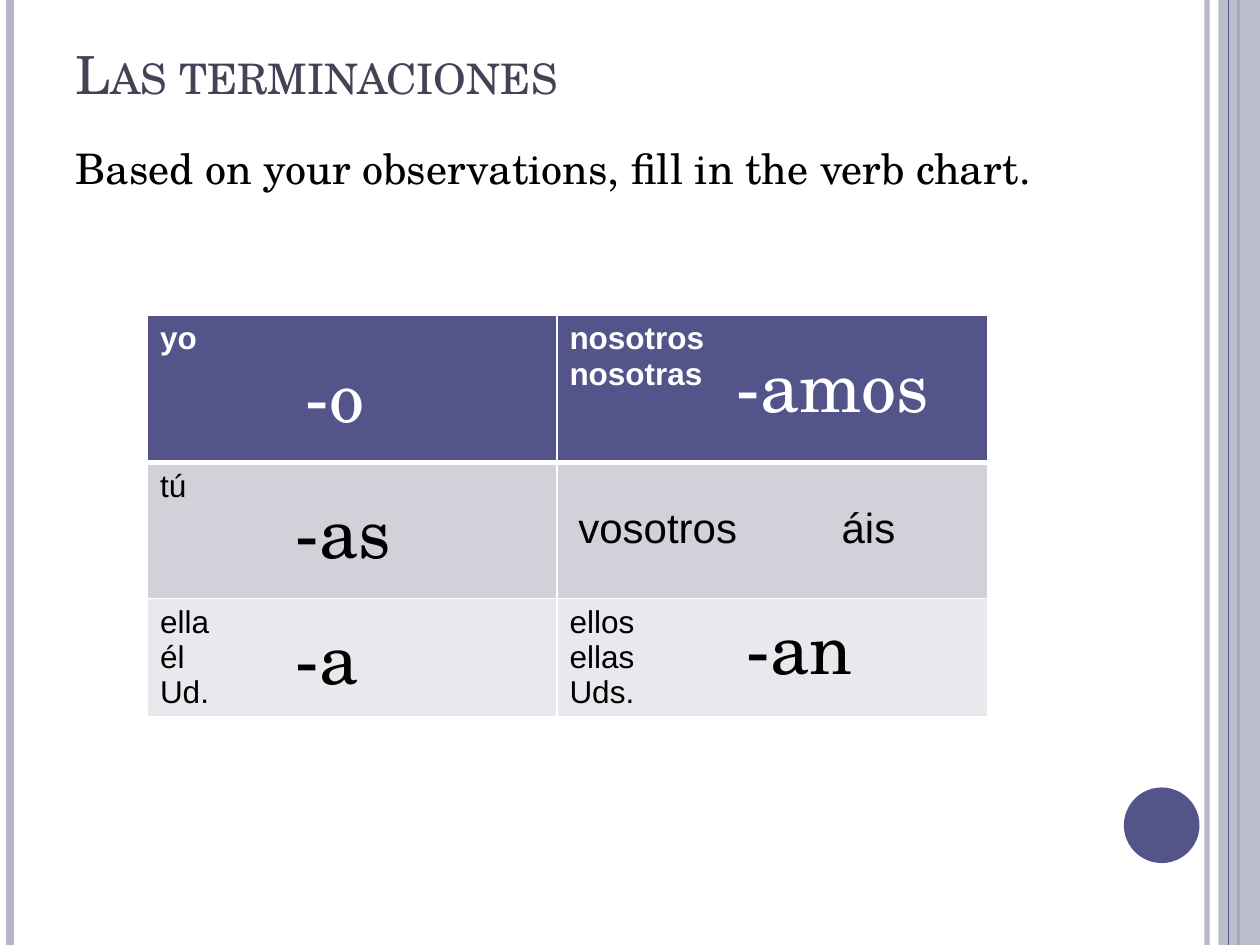
from lxml.etree import SubElement
from pptx import Presentation
from pptx.dml.color import RGBColor
from pptx.enum.shapes import MSO_CONNECTOR, MSO_SHAPE
from pptx.enum.text import MSO_ANCHOR, MSO_AUTO_SIZE, PP_ALIGN
from pptx.oxml.ns import qn
from pptx.util import Inches, Pt

COLORS = {
    "indigo": "53548A", "lavender": "B3B4C4", "slate": "424456",
    "band_dark": "D1D1DA", "band_light": "E9E9ED",
    "white": "FFFFFF", "black": "000000",
}
SERIF, SANS = "TeX Gyre Schola", "Arial"

TITLE = "Las terminaciones"
INSTRUCTION = "Based on your observations, fill in the verb chart."
PRONOUNS = [
    ["yo", "nosotros\nnosotras"],
    ["tú", "vosotros\táis"],
    ["ella\nél\nUd.", "ellos\nellas\nUds."],
]
ROW_STYLES = [
    ("indigo", "white", True),
    ("band_dark", "black", False),
    ("band_light", "black", False),
]
COLUMN_WIDTHS = [3.25, 3.42]
ROW_HEIGHTS = [1.17, 1.08, 0.75]
ENDINGS = [
    ("-o", 2.33, 2.75, 0.92, "white"),
    ("-as", 2.25, 3.83, 1, "black"),
    ("-a", 2.25, 4.83, 1.25, "black"),
    ("-amos", 5.75, 2.67, 2, "white"),
    ("-an", 5.83, 4.75, 1.42, "black"),
]
LEFT_RULES = [
    (9.58, "lavender", 3, 93),
    (0.08, "lavender", 4.5, 100),
    (9.83, "indigo", 1.5, 100),
]
INNER_RULE = (9.75, "indigo", 0.75, 100)


def rgb(color):
    return RGBColor.from_string(COLORS[color])


def set_alpha(fill_parent, percent):
    if percent < 100:
        color = fill_parent.find(qn("a:solidFill")).find(qn("a:srgbClr"))
        SubElement(color, qn("a:alpha"), val=str(percent * 1000))


def style_text(frame, size, face, color, bold=False):
    for paragraph in frame.paragraphs:
        for run in paragraph.runs:
            run.font.size = Pt(size)
            run.font.name = face
            run.font.bold = bold
            run.font.color.rgb = rgb(color)


def place(shape, left, top, width, height):
    shape.left, shape.top = Inches(left), Inches(top)
    shape.width, shape.height = Inches(width), Inches(height)


def add_rule(slide, x, color, weight, opacity):
    rule = slide.shapes.add_connector(
        MSO_CONNECTOR.STRAIGHT, Inches(x), 0, Inches(x), Inches(7.5))
    rule.line.color.rgb = rgb(color)
    rule.line.width = Pt(weight)
    properties = rule.line._ln.getparent()
    set_alpha(rule.line._ln, opacity)
    SubElement(properties, qn("a:effectLst"))


def add_ornament(slide, kind, box, color, opacity=100):
    ornament = slide.shapes.add_shape(kind, *map(Inches, box))
    ornament.shadow.inherit = False
    ornament.fill.solid()
    ornament.fill.fore_color.rgb = rgb(color)
    ornament.line.fill.background()
    set_alpha(ornament._element.spPr, opacity)


def add_decoration(slide):
    for rule in LEFT_RULES:
        add_rule(slide, *rule)
    add_ornament(slide, MSO_SHAPE.RECTANGLE, (9.67, 0, 0.33, 7.5), "lavender", 87)
    add_rule(slide, *INNER_RULE)
    add_ornament(slide, MSO_SHAPE.OVAL, (8.92, 6.25, 0.6, 0.6), "indigo")


def fill_placeholders(slide):
    title, instruction = slide.placeholders
    place(title, 0.5, 0.25, 8.17, 0.63)
    title.text_frame.text = TITLE
    title.text_frame.vertical_anchor = MSO_ANCHOR.BOTTOM
    heading = title.text_frame.paragraphs[0]
    heading.alignment = PP_ALIGN.LEFT
    style_text(title.text_frame, 30, SERIF, "slate")
    heading.runs[0].font._element.set("cap", "small")

    place(instruction, 0.5, 1.08, 8.17, 6)
    instruction.text_frame.text = INSTRUCTION
    sentence = instruction.text_frame.paragraphs[0]
    sentence.space_before = Pt(0)
    layout = sentence._p.get_or_add_pPr()
    layout.set("marL", str(Inches(0.5)))
    layout.set("indent", str(-Inches(0.5)))
    SubElement(layout, qn("a:buNone"))
    style_text(instruction.text_frame, 24, SERIF, "black")


def set_borders(cell, bottom_weight):
    properties = cell._tc.get_or_add_tcPr()
    for side in ("lnL", "lnR", "lnT", "lnB"):
        weight = bottom_weight if side == "lnB" else 1
        border = SubElement(properties, qn(f"a:{side}"), w=str(Pt(weight)))
        fill = SubElement(border, qn("a:solidFill"))
        SubElement(fill, qn("a:srgbClr"), val=COLORS["white"])


def add_verb_chart(slide):
    chart = slide.shapes.add_table(
        len(PRONOUNS), len(COLUMN_WIDTHS), Inches(1.17), Inches(2.5),
        Inches(sum(COLUMN_WIDTHS)), Inches(sum(ROW_HEIGHTS))).table
    for column, width in zip(chart.columns, COLUMN_WIDTHS):
        column.width = Inches(width)
    for r, (pronouns, (fill, color, bold)) in enumerate(zip(PRONOUNS, ROW_STYLES)):
        chart.rows[r].height = Inches(ROW_HEIGHTS[r])
        for c, pronoun in enumerate(pronouns):
            cell = chart.cell(r, c)
            set_borders(cell, 3 if r == 0 else 1)
            if r == 1:
                cell._tc.tcPr.find(qn("a:lnT")).set("w", str(Pt(3)))
            cell.fill.solid()
            cell.fill.fore_color.rgb = rgb(fill)
            cell.text_frame.text = pronoun
            style_text(cell.text_frame, 18, SANS, color, bold)

    vosotros = chart.cell(1, 1)
    vosotros.margin_left, vosotros.margin_top = Inches(0.17), Inches(0.34)
    layout = vosotros.text_frame.paragraphs[0]._p.get_or_add_pPr()
    tabs = SubElement(layout, qn("a:tabLst"))
    SubElement(tabs, qn("a:tab"), pos=str(Inches(2.09)), algn="l")
    style_text(vosotros.text_frame, 24, SANS, "black")


def add_endings(slide):
    for ending, left, top, width, color in ENDINGS:
        box = slide.shapes.add_textbox(*map(Inches, (left, top, width, 0.77)))
        box.text_frame.word_wrap = True
        box.text_frame.auto_size = MSO_AUTO_SIZE.SHAPE_TO_FIT_TEXT
        box.text_frame.text = ending
        style_text(box.text_frame, 40, SERIF, color)


def main():
    presentation = Presentation()
    presentation.slide_width, presentation.slide_height = Inches(10), Inches(7.5)
    slide = presentation.slides.add_slide(presentation.slide_layouts[1])
    add_decoration(slide)
    fill_placeholders(slide)
    add_verb_chart(slide)
    add_endings(slide)
    presentation.save("out.pptx")


if __name__ == "__main__":
    main()
